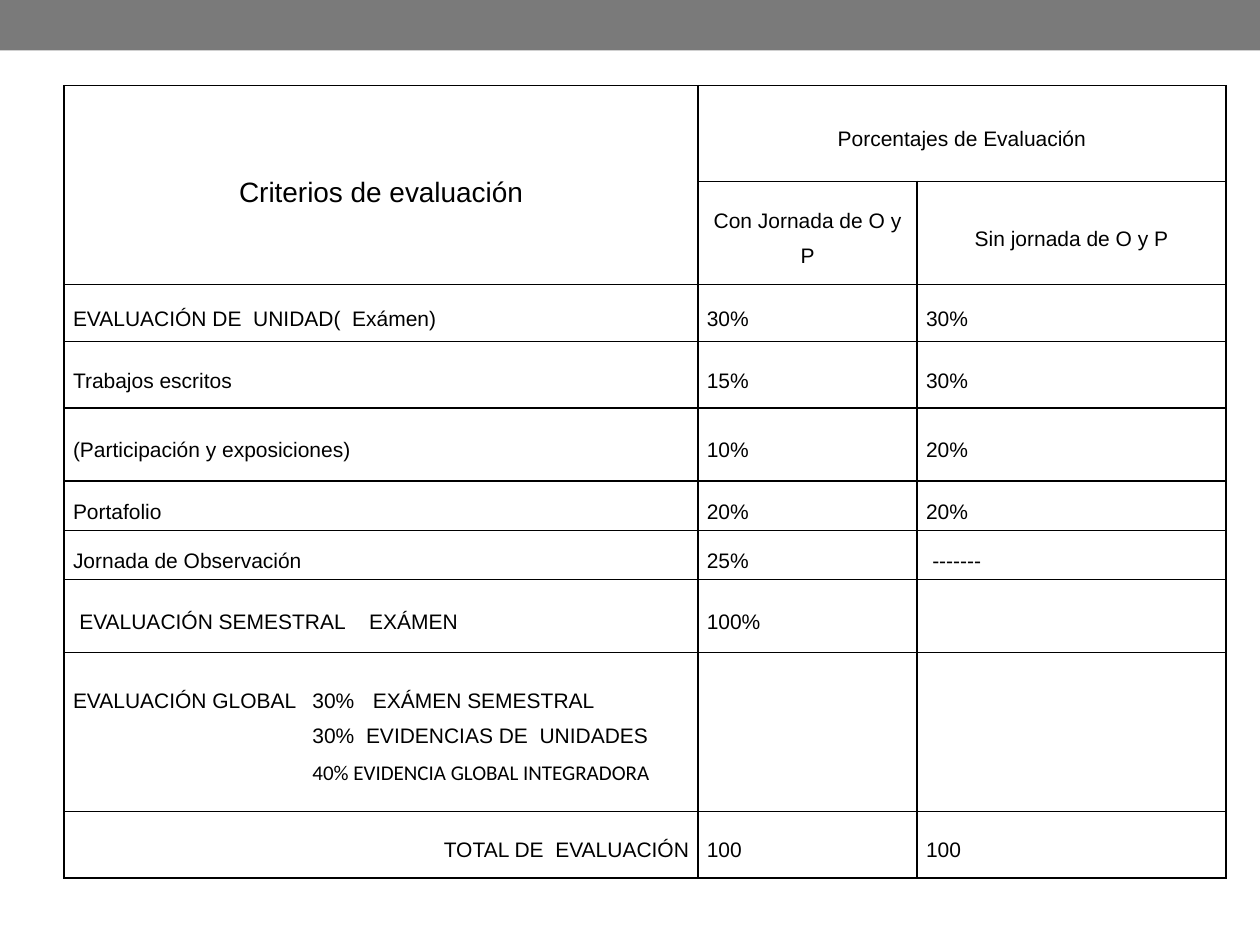
from dataclasses import dataclass

from lxml.etree import SubElement
from pptx import Presentation
from pptx.dml.color import RGBColor
from pptx.enum.shapes import MSO_SHAPE
from pptx.enum.text import MSO_ANCHOR, PP_ALIGN
from pptx.oxml.ns import qn
from pptx.slide import Slide
from pptx.table import Table, _Cell
from pptx.util import Inches, Pt

BLACK, WHITE, GRAY = "000000", "FFFFFF", "7A7A7A"
COLUMN_WIDTHS = (5.03, 1.74, 2.45)
ROW_HEIGHTS = (0.76, 0.82, 0.45, 0.53, 0.58, 0.39, 0.39, 0.58, 1.26, 0.53)
GLOBAL_INDENT = 1.9


@dataclass(frozen=True)
class Line:
    text: str
    align: PP_ALIGN = PP_ALIGN.LEFT
    size: int = 12
    font: str = "Arial"
    indent: float = 0
    tabs: tuple[float, ...] = ()


@dataclass(frozen=True)
class Criterion:
    lines: tuple[Line, ...]
    with_session: Line | None = None
    without_session: Line | None = None


HEADINGS = {
    (0, 0): Line("Criterios de evaluación", PP_ALIGN.CENTER, 16),
    (0, 1): Line("Porcentajes de Evaluación", PP_ALIGN.CENTER),
    (1, 1): Line("Con Jornada de O y P", PP_ALIGN.CENTER),
    (1, 2): Line("Sin jornada de O y P", PP_ALIGN.CENTER),
}

CRITERIA = (
    Criterion((Line("EVALUACIÓN DE  UNIDAD(  Exámen)"),), Line("30%"), Line("30%")),
    Criterion((Line("Trabajos escritos"),), Line("15%"), Line("30%")),
    Criterion((Line("(Participación y exposiciones)"),), Line("10%"), Line("20%")),
    Criterion((Line("Portafolio"),), Line("20%"), Line("20%")),
    Criterion((Line("Jornada de Observación"),), Line("25%"),
              Line("-------", indent=0.05)),
    Criterion((Line("EVALUACIÓN SEMESTRAL\tEXÁMEN", indent=0.05, tabs=(2.3,)),),
              Line("100%")),
    Criterion((
        Line("EVALUACIÓN GLOBAL\t30%\tEXÁMEN SEMESTRAL", tabs=(GLOBAL_INDENT, 2.38)),
        Line("30%  EVIDENCIAS DE  UNIDADES", indent=GLOBAL_INDENT),
        Line("40% EVIDENCIA GLOBAL INTEGRADORA", font="Calibri", indent=GLOBAL_INDENT),
    )),
    Criterion((Line("TOTAL DE  EVALUACIÓN", PP_ALIGN.RIGHT),), Line("100"), Line("100")),
)


def color(hex_code: str) -> RGBColor:
    return RGBColor.from_string(hex_code)


def add_banner(slide: Slide) -> None:
    banner = slide.shapes.add_shape(
        MSO_SHAPE.RECTANGLE, 0, 0, Inches(10), Inches(0.4))
    banner.shadow.inherit = False
    banner.fill.solid()
    banner.fill.fore_color.rgb = color(GRAY)
    banner.line.fill.background()


def style_cell(cell: _Cell) -> None:
    cell.vertical_anchor = MSO_ANCHOR.MIDDLE
    cell.margin_left = cell.margin_right = Inches(0.07)
    cell.margin_top = cell.margin_bottom = 0
    properties = cell._tc.get_or_add_tcPr()
    for side in ("a:lnL", "a:lnR", "a:lnT", "a:lnB"):
        border = SubElement(properties, qn(side), w=str(Pt(1)))
        border_fill = SubElement(border, qn("a:solidFill"))
        SubElement(border_fill, qn("a:srgbClr"), val=BLACK)
    cell.fill.solid()
    cell.fill.fore_color.rgb = color(WHITE)


def write_lines(cell: _Cell, lines: tuple[Line, ...]) -> None:
    frame = cell.text_frame
    for index, line in enumerate(lines):
        paragraph = frame.add_paragraph() if index else frame.paragraphs[0]
        paragraph.text = line.text
        paragraph.alignment = line.align
        paragraph.line_spacing = 1.5
        properties = paragraph._p.get_or_add_pPr()
        if line.indent:
            properties.set("marL", str(Inches(line.indent)))
        if line.tabs:
            tab_list = SubElement(properties, qn("a:tabLst"))
            for position in line.tabs:
                SubElement(tab_list, qn("a:tab"), pos=str(Inches(position)), algn="l")
        paragraph.font.name = line.font
        paragraph.font.size = Pt(line.size)
        paragraph.font.color.rgb = color(BLACK)


def add_grid(slide: Slide) -> Table:
    """Add the empty, bordered table with its merged headings."""
    grid = slide.shapes.add_table(
        len(ROW_HEIGHTS), len(COLUMN_WIDTHS), Inches(0.51), Inches(0.68),
        Inches(sum(COLUMN_WIDTHS)), Inches(sum(ROW_HEIGHTS))).table
    grid.first_row = grid.horz_banding = False
    for column, width in zip(grid.columns, COLUMN_WIDTHS):
        column.width = Inches(width)
    for row, height in zip(grid.rows, ROW_HEIGHTS):
        row.height = Inches(height)
    for cell in grid.iter_cells():
        style_cell(cell)
    grid.cell(0, 0).merge(grid.cell(1, 0))
    grid.cell(0, 1).merge(grid.cell(0, 2))
    return grid


def main() -> None:
    presentation = Presentation()
    presentation.slide_width = Inches(10)
    presentation.slide_height = Inches(7.5)
    slide = presentation.slides.add_slide(presentation.slide_layouts[6])
    add_banner(slide)
    grid = add_grid(slide)
    for (row, column), heading in HEADINGS.items():
        write_lines(grid.cell(row, column), (heading,))
    for row, criterion in enumerate(CRITERIA, start=2):
        write_lines(grid.cell(row, 0), criterion.lines)
        percentages = (criterion.with_session, criterion.without_session)
        for column, percentage in enumerate(percentages, start=1):
            if percentage:
                write_lines(grid.cell(row, column), (percentage,))
    presentation.save("out.pptx")


if __name__ == "__main__":
    main()
